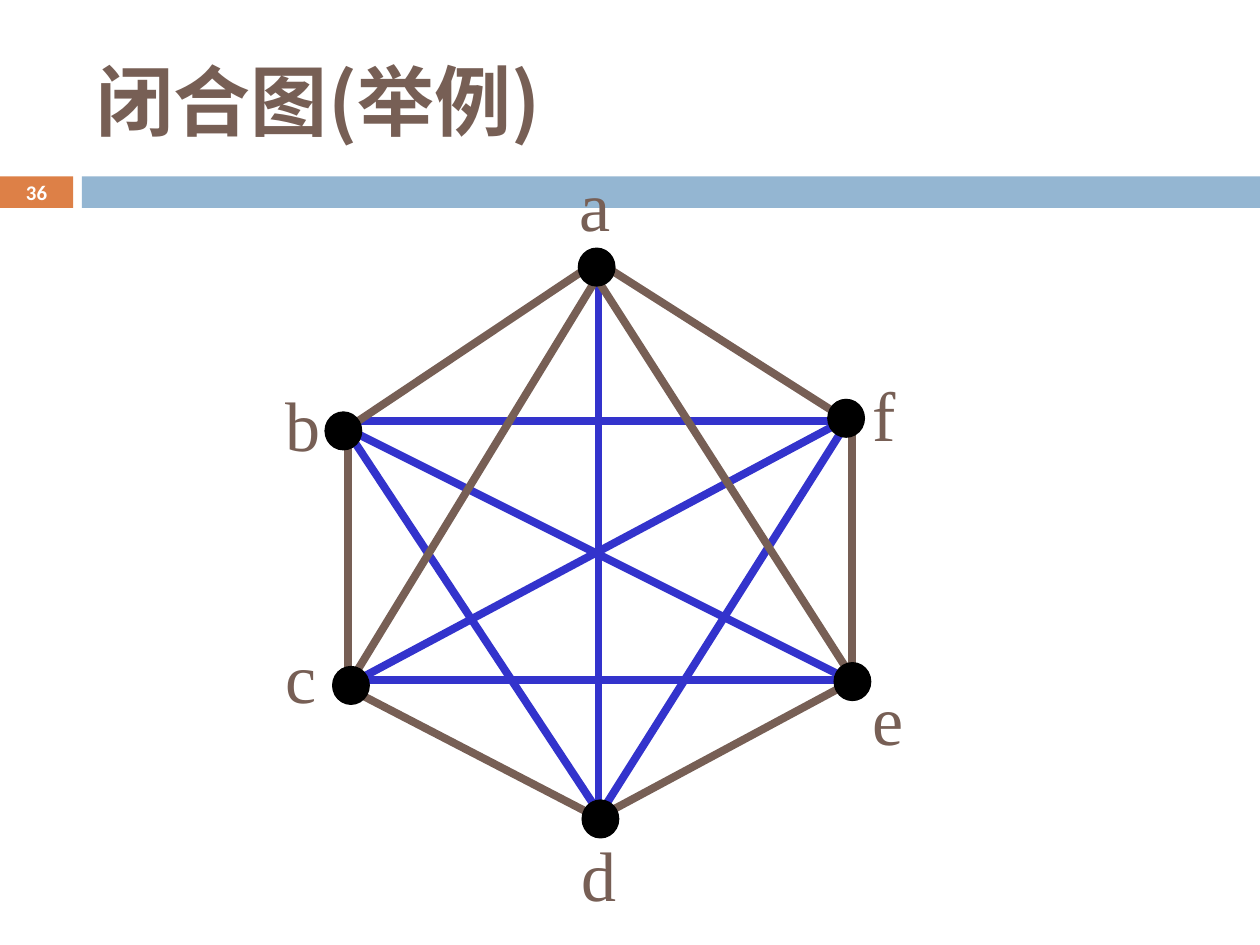
from lxml import etree
from pptx import Presentation
from pptx.dml.color import RGBColor
from pptx.enum.shapes import MSO_CONNECTOR, MSO_SHAPE
from pptx.enum.text import MSO_ANCHOR, MSO_AUTO_SIZE, PP_ALIGN
from pptx.oxml.ns import qn
from pptx.util import Inches, Pt

RECT, OVAL = MSO_SHAPE.RECTANGLE, MSO_SHAPE.OVAL
LINE = MSO_CONNECTOR.STRAIGHT
TOP, MIDDLE = MSO_ANCHOR.TOP, MSO_ANCHOR.MIDDLE
LEFT, CENTER = PP_ALIGN.LEFT, PP_ALIGN.CENTER
FIT = MSO_AUTO_SIZE.SHAPE_TO_FIT_TEXT
NONE = MSO_AUTO_SIZE.NONE

COLORS = {"brown": "775F55", "blue": "3333CC", "band": "94B6D2",
          "orange": "DD8047", "black": "000000", "white": "FFFFFF"}
RGB = {name: RGBColor.from_string(value) for name, value in COLORS.items()}

prs = Presentation()
prs.slide_width, prs.slide_height = Inches(10), Inches(7.5)
s = prs.slides.add_slide(prs.slide_layouts[6])


def add_shape(kind, box, color):
    sp = s.shapes.add_shape(kind, *map(Inches, box))
    sp.shadow.inherit = False
    sp.fill.solid()
    sp.fill.fore_color.rgb = RGB[color]
    return sp


def add_text(text, box, color, font, frame, align=LEFT):
    tf = s.shapes.add_textbox(*map(Inches, box)).text_frame
    for name, value in frame.items():
        setattr(tf, name, value)
    p = tf.paragraphs[0]
    p.alignment = align
    r = p.add_run()
    r.text = text
    for name, value in font.items():
        setattr(r.font, name, value)
    r.font.color.rgb = RGB[color]
    ea = etree.SubElement(r.font._element, qn("a:ea"))
    ea.set("typeface", font["name"])


for box, color in [((0, 1.4, 0.58, 0.25), "orange"),
                   ((0.65, 1.4, 9.35, 0.25), "band")]:
    add_shape(RECT, box, color).line.fill.background()

add_text("闭合图(举例)", (0.67, 0.25, 8.92, 1.08), "brown",
         {"name": "Noto Sans CJK SC", "size": Pt(44), "bold": True},
         {"word_wrap": True, "auto_size": NONE, "vertical_anchor": MIDDLE})
add_text("36", (0, 1.39, 0.58, 0.27), "white",
         {"name": "Calibri", "size": Pt(11.9), "bold": True},
         {"word_wrap": True, "auto_size": NONE, "vertical_anchor": MIDDLE,
          "margin_top": 0, "margin_bottom": 0}, CENTER)

edges = {
    "blue": [
        (2.8, 5.4, 6.8, 5.4),
        (4.75, 2.15, 4.75, 6.48),
        (2.83, 5.4, 6.75, 3.31),
        (2.75, 3.4, 6.75, 5.4),
        (2.73, 3.38, 4.82, 6.55),
        (4.75, 6.48, 6.75, 3.31),
        (2.75, 3.34, 6.75, 3.34),
    ],
    "brown": [
        (2.76, 3.37, 2.76, 5.46),
        (4.67, 2.12, 2.8, 3.37),
        (6.74, 5.42, 4.82, 6.45),
        (4.75, 2.08, 6.7, 3.32),
        (2.76, 5.46, 4.67, 6.45),
        (4.71, 2.17, 6.74, 5.34),
        (4.79, 2.12, 2.8, 5.38),
        (6.76, 3.27, 6.76, 5.36),
    ],
}
for color, lines in edges.items():
    for ends in lines:
        sp = s.shapes.add_connector(LINE, *map(Inches, ends))
        sp.line.color.rgb = RGB[color]
        sp.line.width = Pt(4.5)
        etree.SubElement(sp._element.spPr, qn("a:effectLst"))

vertices = [
    ("d", (4.62, 6.35), (4.52, 6.55, 0.48)),
    ("e", (6.62, 5.26), (6.83, 5.31, 0.45)),
    ("f", (6.57, 3.17), (6.83, 2.9, 0.39)),
    ("a", (4.59, 1.97), (4.5, 1.23, 0.45)),
    ("b", (2.58, 3.27), (2.17, 2.98, 0.48)),
    ("c", (2.64, 5.29), (2.17, 4.98, 0.45)),
]
for label, dot, label_box in vertices:
    sp = add_shape(OVAL, (*dot, 0.29, 0.3), "black")
    sp.line.color.rgb = RGB["black"]
    sp.line.width = Pt(0.75)
    add_text(label, (*label_box, 0.77), "brown",
             {"name": "Times New Roman", "size": Pt(40)},
             {"word_wrap": False, "auto_size": FIT, "vertical_anchor": TOP})

prs.save("out.pptx")
